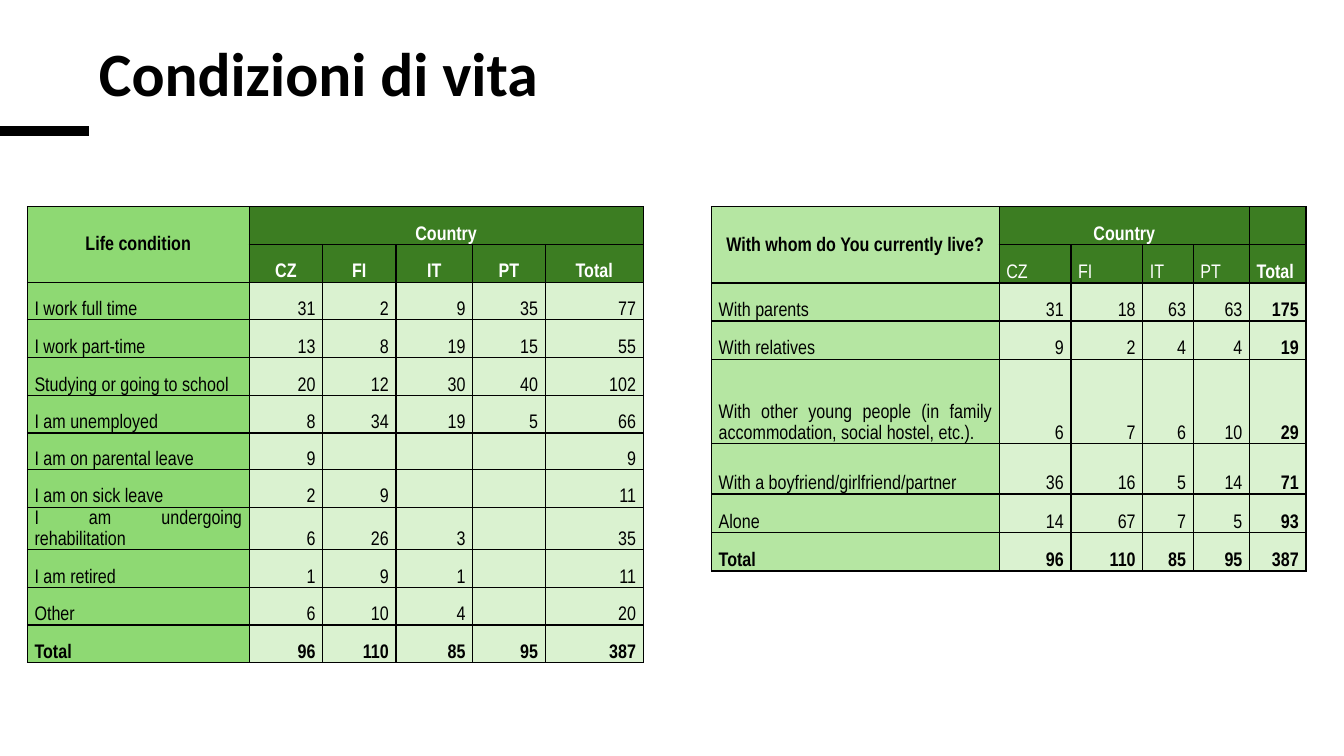
from lxml import etree
from pptx import Presentation
from pptx.dml.color import RGBColor
from pptx.enum.shapes import MSO_CONNECTOR
from pptx.enum.text import MSO_ANCHOR, PP_ALIGN
from pptx.oxml.ns import qn
from pptx.util import Cm, Pt

BLACK = RGBColor(0x00, 0x00, 0x00)
WHITE = RGBColor(0xFF, 0xFF, 0xFF)
DARK = RGBColor(0x3C, 0x7D, 0x22)
MEDIUM = RGBColor(0x8E, 0xD9, 0x73)
LIGHT = RGBColor(0xB5, 0xE6, 0xA2)
PALE = RGBColor(0xDA, 0xF2, 0xD0)
CENTER, RIGHT, JUSTIFY = PP_ALIGN.CENTER, PP_ALIGN.RIGHT, PP_ALIGN.JUSTIFY
TOP, MIDDLE, BOTTOM = MSO_ANCHOR.TOP, MSO_ANCHOR.MIDDLE, MSO_ANCHOR.BOTTOM
STRAIGHT = MSO_CONNECTOR.STRAIGHT

COUNTRIES = ["CZ", "FI", "IT", "PT", "Total"]
LIFE_CONDITION = [
    ["Life condition", "Country", "", "", "", ""],
    ["", *COUNTRIES],
    ["I work full time", 31, 2, 9, 35, 77],
    ["I work part-time", 13, 8, 19, 15, 55],
    ["Studying or going to school", 20, 12, 30, 40, 102],
    ["I am unemployed", 8, 34, 19, 5, 66],
    ["I am on parental leave", 9, "", "", "", 9],
    ["I am on sick leave", 2, 9, "", "", 11],
    ["I am undergoing rehabilitation", 6, 26, 3, "", 35],
    ["I am retired", 1, 9, 1, "", 11],
    ["Other", 6, 10, 4, "", 20],
    ["Total", 96, 110, 85, 95, 387],
]
LIVE_WITH = [
    ["With whom do You currently live?", "Country", "", "", "", ""],
    ["", *COUNTRIES],
    ["With parents", 31, 18, 63, 63, 175],
    ["With relatives", 9, 2, 4, 4, 19],
    ["With other young people (in family accommodation, social hostel, etc.).",
     6, 7, 6, 10, 29],
    ["With a boyfriend/girlfriend/partner", 36, 16, 5, 14, 71],
    ["Alone", 14, 67, 7, 5, 93],
    ["Total", 96, 110, 85, 95, 387],
]


class Deck:
    """Holds the fonts and the current slide, and draws each kind of element."""

    def __init__(self):
        self.prs = Presentation()
        self.prs.slide_width, self.prs.slide_height = Cm(33.87), Cm(19.05)
        self.s = self.prs.slides.add_slide(self.prs.slide_layouts[5])
        self.title_font, self.table_font = "Calibri", "Arial Narrow"

    def title(self, text, left, top, width, height):
        sp = self.s.shapes.title
        sp.left, sp.top, sp.width, sp.height = Cm(left), Cm(top), Cm(width), Cm(height)
        tf = sp.text_frame
        tf.text = text
        tf.vertical_anchor = TOP
        p = tf.paragraphs[0]
        p.alignment, p.line_spacing = PP_ALIGN.LEFT, 0.85
        self.style(p, self.title_font, 44, BLACK, True)

    def rule(self, x1, x2, y, weight):
        line = self.s.shapes.add_connector(STRAIGHT, Cm(x1), Cm(y), Cm(x2), Cm(y))
        line.line.color.rgb, line.line.width = BLACK, Pt(weight)
        etree.SubElement(line._element.spPr, qn("a:effectLst"))

    def style(self, p, name, size, color, bold):
        for r in p.runs:
            r.font.name, r.font.size, r.font.bold = name, Pt(size), bold
            r.font.color.rgb = color

    def cell(self, cell, text, fill, color, align, anchor, bold):
        tcPr = cell._tc.get_or_add_tcPr()
        for side in ("lnL", "lnR", "lnT", "lnB"):
            ln = etree.SubElement(tcPr, qn(f"a:{side}"), w=str(Pt(1)))
            solid = etree.SubElement(ln, qn("a:solidFill"))
            etree.SubElement(solid, qn("a:srgbClr"), val=str(BLACK))
        cell.fill.solid()
        cell.fill.fore_color.rgb = fill
        cell.margin_left = cell.margin_right = Cm(0.18)
        cell.margin_top = cell.margin_bottom = 0
        cell.vertical_anchor = anchor
        p = cell.text_frame.paragraphs[0]
        if text == "":
            etree.SubElement(p._p, qn("a:endParaRPr"), sz="1400")
            return
        p.text = str(text)
        p.alignment, p.line_spacing, p.space_after = align, 1.15, Pt(8)
        self.style(p, self.table_font, 14, color, bold)

    def table(self, rows, left, top, widths, heights, label_fill,
              country_span, code_align, bold_codes, bold_totals):
        frame = self.s.shapes.add_table(len(rows), len(widths), Cm(left), Cm(top),
                                        Cm(sum(widths)), Cm(sum(heights)))
        table = frame.table
        for column, width in zip(table.columns, widths):
            column.width = Cm(width)
        for row, height in zip(table.rows, heights):
            row.height = Cm(height)
        last_row, last_col = len(rows) - 1, len(widths) - 1
        for i, row in enumerate(rows):
            for j, text in enumerate(row):
                head, label = i < 2, j == 0
                fill = label_fill if label else DARK if head else PALE
                color = WHITE if head and not label else BLACK
                anchor = MIDDLE if head and label else BOTTOM
                if head:
                    align = CENTER if i == 0 else code_align
                    bold = i == 0 or bold_codes or j == last_col
                else:
                    align = JUSTIFY if label else RIGHT
                    bold = i == last_row or (bold_totals and j == last_col)
                self.cell(table.cell(i, j), text, fill, color, align, anchor, bold)
        table.cell(0, 0).merge(table.cell(1, 0))
        table.cell(0, 1).merge(table.cell(0, country_span))


def main():
    deck = Deck()
    deck.rule(0, 2.24, 3.3, 6.75)
    deck.title("Condizioni di vita", 2.24, 1.04, 27.56, 3.61)
    deck.table(LIFE_CONDITION, 0.69, 5.21, [5.59, 1.85, 1.85, 1.93, 1.83, 2.47],
               [0.95] * 6 + [0.92] + [0.95] * 5, MEDIUM, 5, CENTER, True, False)
    deck.table(LIVE_WITH, 17.93, 5.21, [7.25, 1.81, 1.81, 1.27, 1.42, 1.42],
               [0.96] * 4 + [2.13, 1.27, 0.97, 0.97], LIGHT, 4, JUSTIFY, False, True)
    deck.prs.save("out.pptx")


if __name__ == "__main__":
    main()
